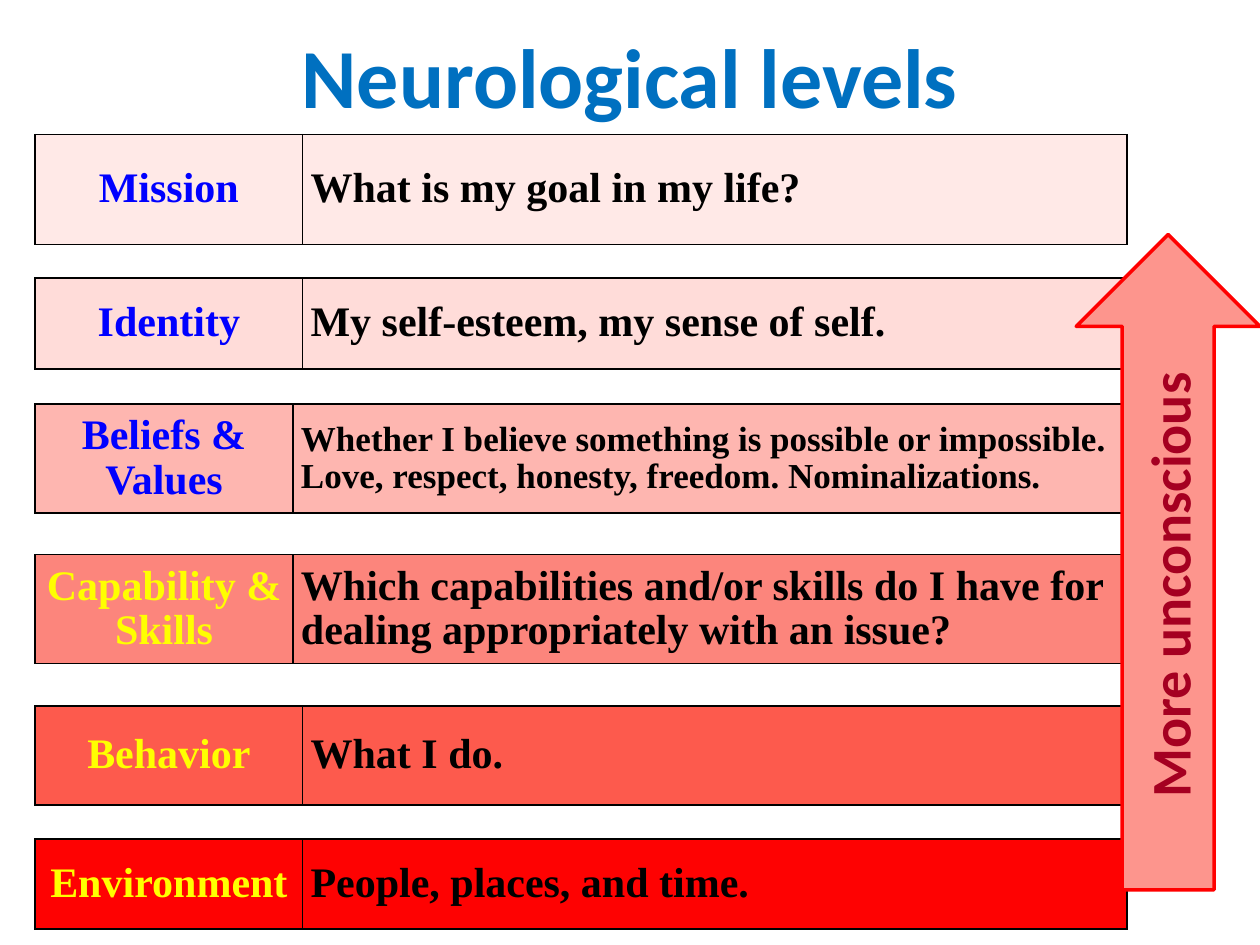
from lxml import etree
from pptx import Presentation
from pptx.dml.color import RGBColor
from pptx.enum import shapes, text
from pptx.oxml.ns import qn
from pptx.util import Pt

THEME = {
    "title": RGBColor(0x00, 0x70, 0xC0),
    "blue": RGBColor(0x00, 0x00, 0xFF),
    "yellow": RGBColor(0xFF, 0xFF, 0x00),
    "black": RGBColor(0x00, 0x00, 0x00),
    "arrow_fill": RGBColor(0xFD, 0x95, 0x8D),
    "arrow_line": RGBColor(0xFF, 0x00, 0x00),
    "arrow_text": RGBColor(0xA5, 0x00, 0x21),
    "sans": "Calibri",
    "serif": "Times New Roman",
    "title_size": 48,
    "arrow_size": 32,
    "level_size": 24,
    "small_size": 20,
}
LEFT, TABLE_WIDTH = 20, 624
NARROW, WIDE = 147.5, 153

# name, name colour, fill, top, height, name column width, text size, lines
LEVELS = [
    ("Mission", "blue", "FFE9E7", 77, 62.6, WIDE, "level_size",
     ["What is my goal in my life?"]),
    ("Identity", "blue", "FFDCD9", 159, 52, WIDE, "level_size",
     ["My self-esteem, my sense of self."]),
    ("Beliefs & Values", "blue", "FEB6B0", 231, 62.3, NARROW, "small_size",
     ["Whether I believe something is possible or impossible.",
      "Love, respect, honesty, freedom. Nominalizations."]),
    ("Capability & Skills", "yellow", "FC857C", 317, 62.3, NARROW, "level_size",
     ["Which capabilities and/or skills do I have for dealing "
      "appropriately with an issue?"]),
    ("Behavior", "yellow", "FD5A4D", 403.5, 56.6, WIDE, "level_size",
     ["What I do."]),
    ("Environment", "yellow", "FE0202", 479.5, 51.3, WIDE, "level_size",
     ["People, places, and time."]),
]


def style(para, font_name, size, color, align):
    para.alignment = align
    para.font.name = font_name
    para.font.size = Pt(size)
    para.font.bold = True
    para.font.color.rgb = color


def add_borders(cell):
    """Give all four sides of a cell a black 1 pt line."""
    properties = cell._tc.get_or_add_tcPr()
    for index, side in enumerate(("lnL", "lnR", "lnT", "lnB")):
        line = etree.Element(qn(f"a:{side}"), w=str(Pt(1)))
        fill = etree.SubElement(line, qn("a:solidFill"))
        etree.SubElement(fill, qn("a:srgbClr"), val=str(THEME["black"]))
        properties.insert(index, line)


deck = Presentation()
deck.slide_width, deck.slide_height = Pt(720), Pt(540)
page = deck.slides.add_slide(deck.slide_layouts[5])

title = page.shapes.title
title.left, title.top, title.width, title.height = Pt(36), Pt(9.5), Pt(648), Pt(67)
title.text_frame.text = "Neurological levels"
title.text_frame.vertical_anchor = text.MSO_ANCHOR.MIDDLE
style(title.text_frame.paragraphs[0], THEME["sans"], THEME["title_size"],
      THEME["title"], text.PP_ALIGN.CENTER)

for name, name_color, fill, top, height, name_width, size, lines in LEVELS:
    frame = page.shapes.add_table(1, 2, Pt(LEFT), Pt(top), Pt(TABLE_WIDTH), Pt(height))
    table = frame.table
    table.first_row = table.horz_banding = False
    table.rows[0].height = Pt(height)
    table.columns[0].width = Pt(name_width)
    table.columns[1].width = Pt(TABLE_WIDTH - name_width)
    contents = [
        (name, THEME["level_size"], THEME[name_color], text.PP_ALIGN.CENTER),
        ("\n".join(lines), THEME[size], THEME["black"], text.PP_ALIGN.LEFT),
    ]
    for cell, (words, points, color, align) in zip(table.rows[0].cells, contents):
        cell.text = words
        cell.vertical_anchor = text.MSO_ANCHOR.MIDDLE
        cell.margin_left = cell.margin_right = Pt(4.5)
        cell.margin_top = cell.margin_bottom = Pt(4.5)
        cell.fill.solid()
        cell.fill.fore_color.rgb = RGBColor.from_string(fill)
        add_borders(cell)
        for para in cell.text_frame.paragraphs:
            style(para, THEME["serif"], points, color, align)
            para.line_spacing = 0.95

arrow = page.shapes.add_shape(shapes.MSO_SHAPE.UP_ARROW,
                              Pt(615), Pt(134), Pt(105), Pt(374.5))
arrow.shadow.inherit = False
arrow.fill.solid()
arrow.fill.fore_color.rgb = THEME["arrow_fill"]
arrow.line.color.rgb = THEME["arrow_line"]
arrow.line.width = Pt(2)
arrow.text_frame.text = "More unconscious"
arrow.text_frame.vertical_anchor = text.MSO_ANCHOR.MIDDLE
arrow.text_frame._txBody.bodyPr.set("vert", "vert270")
style(arrow.text_frame.paragraphs[0], THEME["sans"], THEME["arrow_size"],
      THEME["arrow_text"], text.PP_ALIGN.CENTER)

deck.save("out.pptx")
